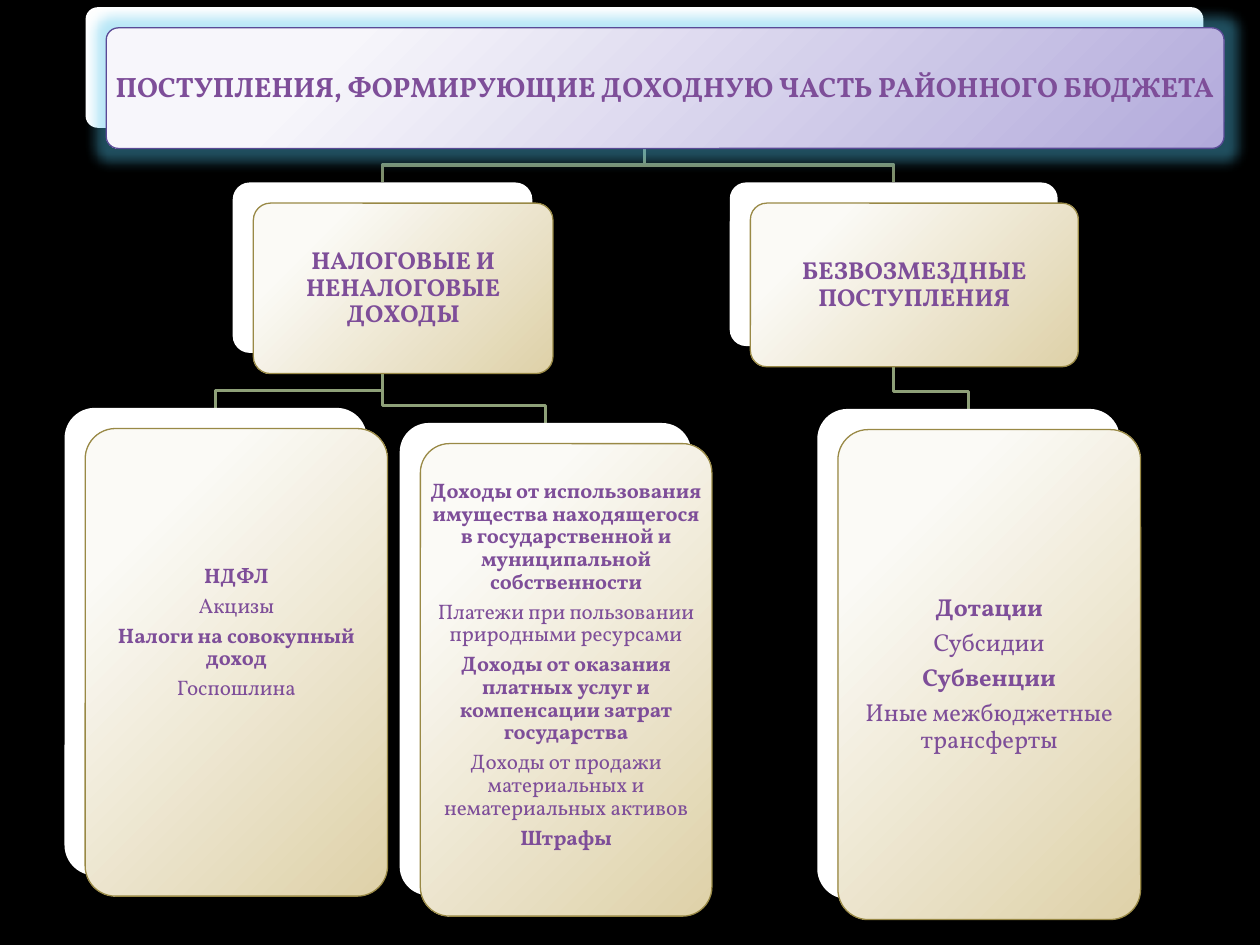
from lxml.etree import SubElement
from pptx import Presentation
from pptx.dml.color import RGBColor
from pptx.enum.shapes import MSO_SHAPE
from pptx.enum.text import MSO_ANCHOR, MSO_AUTO_SIZE, PP_ALIGN
from pptx.oxml.ns import qn
from pptx.util import Pt

BLACK = RGBColor(0x00, 0x00, 0x00)
WHITE = RGBColor(0xFF, 0xFF, 0xFF)
PURPLE = RGBColor(0x7E, 0x4E, 0x99)
GREEN = RGBColor(0x8E, 0xA0, 0x78)
DARK_GREEN = RGBColor(0x7D, 0x8D, 0x6A)
# Light stop, dark stop and outline of the cards
LILAC = RGBColor(0xF7, 0xF6, 0xFB), RGBColor(0xB2, 0xAA, 0xDB), RGBColor(0x5A, 0x4A, 0x96)
SAND = RGBColor(0xFB, 0xFA, 0xF6), RGBColor(0xDE, 0xD1, 0xA8), RGBColor(0x99, 0x89, 0x46)
GLOW = RGBColor(0x50, 0xC4, 0xEC)
FONT = "Vollkorn"
SHIFT = 11.8  # offset of the front card from the white one, both ways
ELBOW = 10  # height of the last leg of a connector

# Each node: parent, white card (left, top, width, height), placeholder index,
# text size, inset, extra bottom inset, paragraphs (bold and regular in turn)
NODES = {
    "budget": (None, (48.9, 4.1, 638.8, 68.9), 0, 16, 5, 0, [
        "ПОСТУПЛЕНИЯ, ФОРМИРУЮЩИЕ ДОХОДНУЮ ЧАСТЬ РАЙОННОГО БЮДЖЕТА"]),
    "own": ("budget", (133, 104.3, 171.2, 97.4), 1, 14, 4.3, 0, [
        "НАЛОГОВЫЕ И НЕНАЛОГОВЫЕ ДОХОДЫ"]),
    "taxes": ("own", (36.9, 233.1, 172.8, 267.2), 2, 12, 3.6, 34, [
        "НДФЛ",
        "Акцизы",
        "Налоги на совокупный доход",
        "Госпошлина"]),
    "non_tax": ("own", (228.4, 241.7, 166.6, 270), None, 12, 3.6, 17, [
        "Доходы от использования имущества находящегося в государственной "
        "и муниципальной собственности",
        "Платежи при пользовании природными ресурсами",
        "Доходы от оказания платных услуг и компенсации затрат государства",
        "Доходы от продажи материальных и нематериальных активов",
        "Штрафы"]),
    "grants": ("budget", (417, 104.3, 187.4, 93.5), 3, 14, 4.3, 0, [
        "БЕЗВОЗМЕЗДНЫЕ ПОСТУПЛЕНИЯ"]),
    "transfers": ("grants", (467, 233.7, 173, 280), 4, 14, 4.3, 0, [
        "Дотации",
        "Субсидии",
        "Субвенции",
        "Иные межбюджетные трансферты"]),
}

prs = Presentation()
prs.slide_width, prs.slide_height = Pt(720), Pt(540)
s = prs.slides.add_slide(prs.slide_layouts[4])
s.background.fill.solid()
s.background.fill.fore_color.rgb = BLACK
holders = {ph.placeholder_format.idx: ph for ph in s.placeholders}


def add_card(left, top, width, height):
    sp = s.shapes.add_shape(MSO_SHAPE.ROUNDED_RECTANGLE,
                            Pt(left), Pt(top), Pt(width), Pt(height))
    sp.adjustments[0] = 0.1
    sp.shadow.inherit = False
    return sp


# Elbow lines from each parent down to its children
for parent, (left, top, width, height), *rest in NODES.values():
    if parent is None:
        continue
    px, py, pw, ph = NODES[parent][1]
    x1, y1, x2 = px + pw / 2, py + ph, left + width / 2
    bend = top - ELBOW
    fb = s.shapes.build_freeform(Pt(x1), Pt(y1))
    fb.add_line_segments([(Pt(x1), Pt(bend)), (Pt(x2), Pt(bend)), (Pt(x2), Pt(top))],
                         close=False)
    sp = fb.convert_to_shape()
    sp.shadow.inherit = False
    sp.fill.background()
    sp.line.color.rgb = DARK_GREEN if parent == "budget" else GREEN
    sp.line.width = Pt(2)

# Cards with their text
for parent, (left, top, width, height), idx, size, inset, extra, texts in NODES.values():
    back = add_card(left, top, width, height)
    back.fill.solid()
    back.fill.fore_color.rgb = WHITE
    back.line.fill.background()

    # Front card with a corner-to-corner gradient
    light, dark, outline = SAND if parent else LILAC
    front = add_card(left + SHIFT, top + SHIFT, width, height)
    front.line.color.rgb = outline
    front.line.width = Pt(0.75)
    front.fill.gradient()
    for stop, pos, color in zip(front.fill.gradient_stops, (0.2, 1), (light, dark)):
        stop.position = pos
        stop.color.rgb = color
    spPr = front.element.spPr
    grad = spPr.find(qn("a:gradFill"))
    grad.remove(grad.find(qn("a:lin")))
    circle = SubElement(grad, qn("a:path"), path="circle")
    SubElement(circle, qn("a:fillToRect"), l="-15000", t="-15000", r="115000", b="115000")

    # Glow around the heading card
    if parent is None:
        glow = SubElement(spPr.find(qn("a:effectLst")), qn("a:glow"), rad=str(Pt(14)))
        clr = SubElement(glow, qn("a:srgbClr"), val=str(GLOW))
        SubElement(clr, qn("a:alpha"), val="40000")

    # Text on top of the front card
    box = s.shapes.add_textbox(0, 0, 0, 0) if idx is None else holders[idx]
    box.left, box.top = front.left, front.top
    box.width, box.height = front.width, front.height
    s.shapes.element.append(box.element)
    tf = box.text_frame
    tf.word_wrap = True
    tf.auto_size = MSO_AUTO_SIZE.NONE
    tf.vertical_anchor = MSO_ANCHOR.MIDDLE
    tf.margin_left = tf.margin_right = tf.margin_top = Pt(inset)
    tf.margin_bottom = Pt(inset + extra)
    for i, text in enumerate(texts):
        p = tf.paragraphs[0] if i == 0 else tf.add_paragraph()
        p.alignment = PP_ALIGN.CENTER
        p.line_spacing = 0.9
        p.space_before = Pt(0)
        p.space_after = Pt(size * 0.35)
        pPr = p._p.get_or_add_pPr()
        pPr.set("marL", "0")
        pPr.set("indent", "0")
        SubElement(pPr, qn("a:buNone"))
        r = p.add_run()
        r.text = text
        r.font.name = FONT
        r.font.size = Pt(size)
        r.font.bold = i % 2 == 0
        r.font.color.rgb = PURPLE

prs.save("out.pptx")
